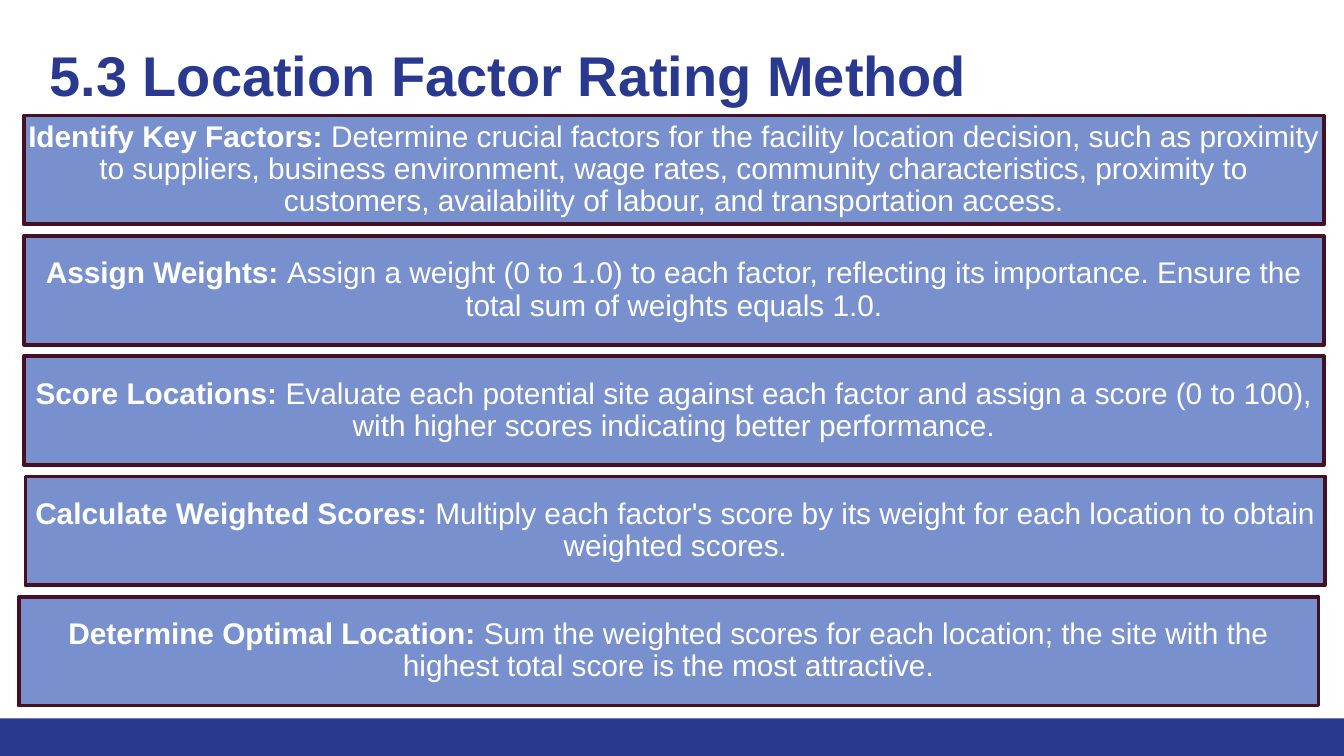
from dataclasses import dataclass

from pptx import Presentation
from pptx.dml.color import RGBColor
from pptx.enum.shapes import MSO_SHAPE
from pptx.enum.text import MSO_ANCHOR, PP_ALIGN
from pptx.util import Inches, Pt

RECTANGLE = MSO_SHAPE.RECTANGLE
TOP, MIDDLE = MSO_ANCHOR.TOP, MSO_ANCHOR.MIDDLE
CENTER = PP_ALIGN.CENTER


@dataclass(frozen=True)
class Theme:
    navy: RGBColor = RGBColor.from_string("2A3990")
    panel: RGBColor = RGBColor.from_string("7890CD")
    border: RGBColor = RGBColor.from_string("441022")
    white: RGBColor = RGBColor.from_string("FFFFFF")
    font: str = "Arial"
    title_size: int = 30
    step_size: int = 16
    border_width: int = 2


THEME = Theme()
SLIDE_WIDTH, SLIDE_HEIGHT = 10, 5.625
FOOTER_HEIGHT = 0.28
STEPS_TOP, STEP_PITCH = 0.86, 0.895
STEP_WIDTH, STEP_HEIGHT = 9.67, 0.81

# Left edge, heading and explanation of each step
STEPS = [
    (0.18, "Identify Key Factors: ",
     "Determine crucial factors for the facility location decision, such as "
     "proximity to suppliers, business environment, wage rates, community "
     "characteristics, proximity to customers, availability of labour, and "
     "transportation access."),
    (0.18, "Assign Weights: ",
     "Assign a weight (0 to 1.0) to each factor, reflecting its importance. "
     "Ensure the total sum of weights equals 1.0."),
    (0.18, "Score Locations: ",
     "Evaluate each potential site against each factor and assign a score "
     "(0 to 100), with higher scores indicating better performance."),
    (0.19, "Calculate Weighted Scores: ",
     "Multiply each factor's score by its weight for each location to obtain "
     "weighted scores."),
    (0.14, "Determine Optimal Location: ",
     "Sum the weighted scores for each location; the site with the highest "
     "total score is the most attractive."),
]


def set_frame(frame, margin, anchor):
    frame.word_wrap = True
    frame.vertical_anchor = anchor
    frame.margin_left = frame.margin_right = Inches(margin)
    frame.margin_top = frame.margin_bottom = Inches(margin)


def add_span(para, text, size, color, bold):
    span = para.add_run()
    span.text = text
    span.font.name = THEME.font
    span.font.size = Pt(size)
    span.font.color.rgb = color
    span.font.bold = bold


def add_panel(page, box, color):
    panel = page.shapes.add_shape(RECTANGLE, *map(Inches, box))
    panel.shadow.inherit = False
    panel.fill.solid()
    panel.fill.fore_color.rgb = color
    panel.line.fill.background()
    return panel


def add_title(page, box, text):
    frame = page.shapes.add_textbox(*map(Inches, box)).text_frame
    set_frame(frame, 0.1, TOP)
    add_span(frame.paragraphs[0], text, THEME.title_size, THEME.navy, True)


def add_step(page, box, heading, explanation):
    panel = add_panel(page, box, THEME.panel)
    panel.line.color.rgb = THEME.border
    panel.line.width = Pt(THEME.border_width)
    set_frame(panel.text_frame, 0.01, MIDDLE)
    para = panel.text_frame.paragraphs[0]
    para.alignment = CENTER
    para.line_spacing = 0.9
    add_span(para, heading, THEME.step_size, THEME.white, True)
    add_span(para, explanation, THEME.step_size, THEME.white, False)


def main():
    deck = Presentation()
    deck.slide_width = Inches(SLIDE_WIDTH)
    deck.slide_height = Inches(SLIDE_HEIGHT)
    page = deck.slides.add_slide(deck.slide_layouts[6])

    footer_top = SLIDE_HEIGHT - FOOTER_HEIGHT
    add_panel(page, (0, footer_top, SLIDE_WIDTH, FOOTER_HEIGHT), THEME.navy)
    add_title(page, (0.27, 0.2, 9.39, 0.89), "5.3 Location Factor Rating Method")
    for row, (left, heading, explanation) in enumerate(STEPS):
        top = STEPS_TOP + row * STEP_PITCH
        add_step(page, (left, top, STEP_WIDTH, STEP_HEIGHT), heading, explanation)

    deck.save("out.pptx")


if __name__ == "__main__":
    main()
